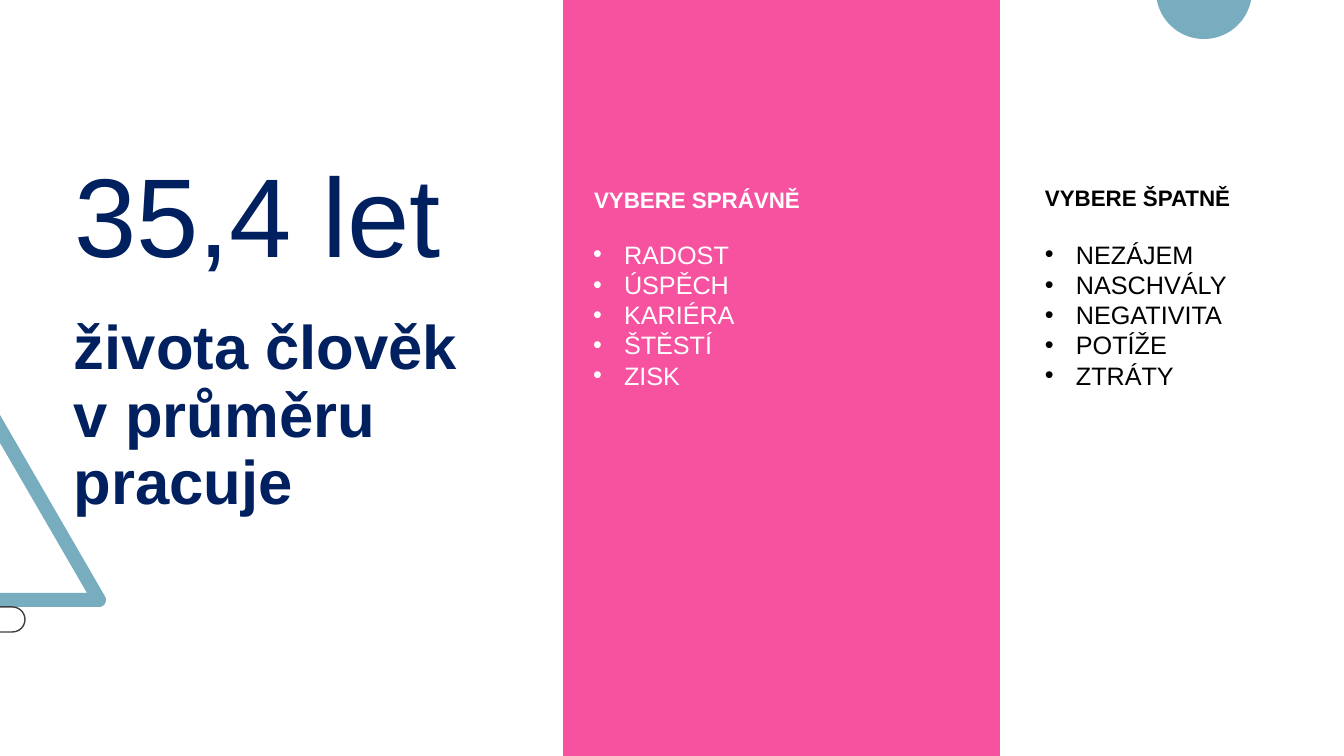
from math import cos, radians, sin
from lxml.etree import SubElement
from pptx import Presentation
from pptx.dml.color import RGBColor
from pptx.enum.shapes import MSO_SHAPE
from pptx.enum.text import MSO_ANCHOR, MSO_AUTO_SIZE, PP_ALIGN
from pptx.oxml.ns import qn
from pptx.util import Pt

PX = 914400 / 100.8
WIDTH, HEIGHT = 1344, 756
INDENT = 31
NAVY = RGBColor(0x00, 0x20, 0x60)
PINK = RGBColor(0xF6, 0x52, 0xA0)
TEAL = RGBColor(0x77, 0xAD, 0xBE)
GREY = RGBColor(0x3F, 0x3F, 0x3F)
WHITE = RGBColor(0xFF, 0xFF, 0xFF)
BLACK = RGBColor(0x00, 0x00, 0x00)

TITLE = "35,4 let"
SUBTITLE = "života člověk v průměru pracuje"
COLUMNS = [
    {"head": "VYBERE SPRÁVNĚ", "head_box": (594, 186, 268, 27), "list_box": (583, 234, 371, 163),
     "color": WHITE, "items": ["RADOST", "ÚSPĚCH", "KARIÉRA", "ŠTĚSTÍ", "ZISK"]},
    {"head": "VYBERE ŠPATNĚ", "head_box": (1045, 184, 299, 27), "list_box": (1035, 234, 309, 163),
     "color": BLACK, "items": ["NEZÁJEM", "NASCHVÁLY", "NEGATIVITA", "POTÍŽE", "ZTRÁTY"]},
]


def emu(px):
    """Turn px into EMU."""
    return round(px * PX)


def arc(cx, cy, radius, start, end, steps=40):
    """Return points along a circular arc, angles in degrees."""
    angles = [radians(start + (end - start) * i / steps) for i in range(steps + 1)]
    return [(cx + radius * cos(a), cy + radius * sin(a)) for a in angles]


def style(shape, fill=None, line=None):
    """Set fill and outline of a shape and drop its shadow."""
    shape.shadow.inherit = False
    if fill is None:
        shape.fill.background()
    else:
        shape.fill.solid()
        shape.fill.fore_color.rgb = fill
    if line is None:
        shape.line.fill.background()
    else:
        shape.line.color.rgb = line
        shape.line.width = Pt(1)


def add_outline(s, points, fill):
    """Add a closed filled outline."""
    points = [(emu(x), emu(y)) for x, y in points]
    builder = s.shapes.build_freeform(*points[0])
    builder.add_line_segments(points[1:], close=True)
    style(builder.convert_to_shape(), fill)


def add_preset(s, kind, box, adjust, **colors):
    """Add a preset shape with one adjustment."""
    sp = s.shapes.add_shape(kind, *map(emu, box))
    sp.adjustments[0] = adjust
    style(sp, **colors)


def add_bullet(p, color):
    """Give a paragraph a coloured bullet and a hanging indent."""
    pPr = p._p.get_or_add_pPr()
    pPr.set("marL", str(emu(INDENT)))
    pPr.set("indent", str(-emu(INDENT)))
    clr = SubElement(pPr, qn("a:buClr"))
    SubElement(clr, qn("a:srgbClr"), val=str(color))
    SubElement(pPr, qn("a:buFont"), typeface="Arial")
    SubElement(pPr, qn("a:buChar"), char="•")


def write(sp, box, lines, size, color, bold=False, spacing=1.0, inset=(0, 0), bullets=False):
    """Place a text shape and fill it with formatted paragraphs."""
    for name, value in zip(("left", "top", "width", "height"), box):
        setattr(sp, name, emu(value))
    tf = sp.text_frame
    frame = {"word_wrap": True, "auto_size": MSO_AUTO_SIZE.NONE, "vertical_anchor": MSO_ANCHOR.TOP,
             "margin_left": emu(inset[0]), "margin_right": emu(inset[0]),
             "margin_top": emu(inset[1]), "margin_bottom": emu(inset[1])}
    for name, value in frame.items():
        setattr(tf, name, value)
    for i, line in enumerate(lines):
        p = tf.add_paragraph() if i else tf.paragraphs[0]
        if bullets:
            add_bullet(p, color)
        p.alignment = PP_ALIGN.LEFT
        p.line_spacing = spacing
        p.space_before = Pt(0)
        r = p.add_run()
        r.text = line
        for name, value in {"name": "Arial", "size": Pt(size), "bold": bold}.items():
            setattr(r.font, name, value)
        r.font.color.rgb = color


def add_text(s, box, *args, **kwargs):
    """Add a text box and write into it."""
    write(s.shapes.add_textbox(*map(emu, box)), box, *args, **kwargs)


def main():
    """Build the slide."""
    prs = Presentation()
    prs.slide_width, prs.slide_height = emu(WIDTH), emu(HEIGHT)
    s = prs.slides.add_slide(prs.slide_layouts[5])
    add_outline(s, [(0, 607), (0, 593), (87, 593), (0, 443), (0, 415)] + arc(99, 600, 7, -25, 90), TEAL)
    add_outline(s, arc(1204, -9, 48, 10.8, 169.2), TEAL)
    add_preset(s, MSO_SHAPE.ROUNDED_RECTANGLE, (-24, 607, 49, 25), 0.5, line=GREY)
    write(s.shapes.title, (74, 145, 376, 136), [TITLE], 80, NAVY)
    add_text(s, (74, 316, 397, 169), [SUBTITLE], 44, NAVY, bold=True, spacing=0.91)
    add_preset(s, MSO_SHAPE.PARALLELOGRAM, (563, 0, 437, HEIGHT), 0, fill=PINK)
    for col in COLUMNS:
        add_text(s, col["head_box"], [col["head"]], 16, col["color"], bold=True)
        add_text(s, col["list_box"], col["items"], 18, col["color"], inset=(10, 5), bullets=True)
    prs.save("out.pptx")


if __name__ == "__main__":
    main()
